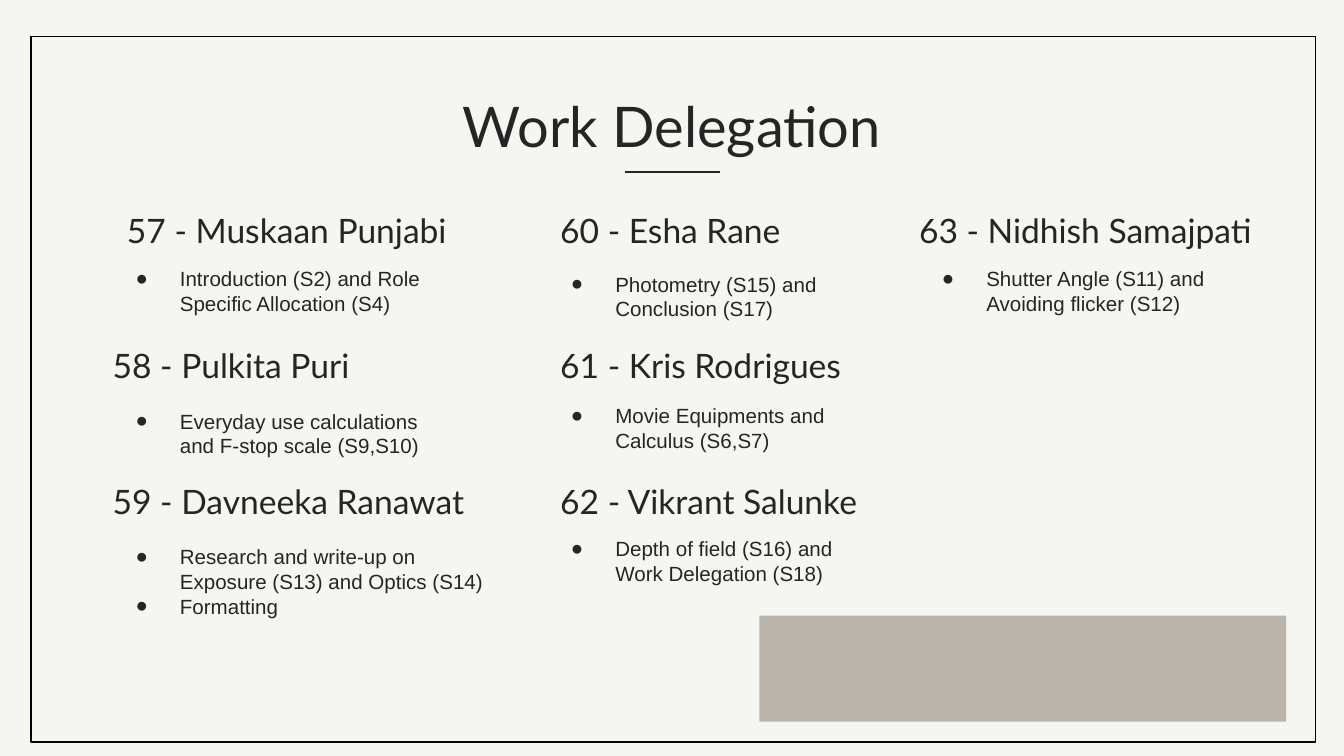
"""Build the Work Delegation slide: members in columns, each with assigned topics."""
import pptx
import pptx.dml.color
import pptx.enum.shapes
import pptx.enum.text
import pptx.util
from lxml import etree

Inches = pptx.util.Inches
Pt = pptx.util.Pt
ALIGN = pptx.enum.text.PP_ALIGN
ANCHOR = pptx.enum.text.MSO_ANCHOR
RECTANGLE = pptx.enum.shapes.MSO_SHAPE.RECTANGLE

INK, PAPER, STONE, BLACK = "252525", "F5F6F1", "B9B5AA", "000000"
SLIDE_WIDTH = 10
SLIDE_HEIGHT = SLIDE_WIDTH * 9 / 16
HEADING = "Work Delegation"
FIRST_ROW, ROW_STEP = 1.49, 1.01
NAME_SIZE = (3.13, 0.44)
DUTY_WIDTH, DUTY_HEIGHT = 2.64, 0.58

COLUMNS = [
    {"name_left": 0.74, "duty_left": 0.74, "members": [
        {"name": "57 - Muskaan Punjabi", "drop": 0.39, "name_left": 0.57, "align": ALIGN.CENTER,
         "duties": ["Introduction (S2) and Role Specific Allocation (S4)"]},
        {"name": "58 - Pulkita Puri", "drop": 0.44,
         "duties": ["Everyday use calculations and F-stop scale (S9,S10)"]},
        {"name": "59 - Davneeka Ranawat", "drop": 0.44, "duty_width": 2.96,
         "duties": ["Research and write-up on Exposure (S13) and Optics (S14)", "Formatting"]},
    ]},
    {"name_left": 4.07, "duty_left": 3.98, "members": [
        {"name": "60 - Esha Rane", "drop": 0.43,
         "duties": ["Photometry (S15) and Conclusion (S17)"]},
        {"name": "61 - Kris Rodrigues", "drop": 0.4,
         "duties": ["Movie Equipments and Calculus (S6,S7)"]},
        {"name": "62 - Vikrant Salunke", "drop": 0.38,
         "duties": ["Depth of field (S16) and Work Delegation (S18)"]},
    ]},
    {"name_left": 6.74, "duty_left": 6.74, "members": [
        {"name": "63 - Nidhish Samajpati", "drop": 0.39,
         "duties": ["Shutter Angle (S11) and Avoiding flicker (S12)"]},
    ]},
]


def color(value):
    return pptx.dml.color.RGBColor.from_string(value)


def add_rectangle(slide, box, fill=None, line=None):
    rectangle = slide.shapes.add_shape(RECTANGLE, *map(Inches, box))
    rectangle.shadow.inherit = False
    if fill:
        rectangle.fill.solid()
        rectangle.fill.fore_color.rgb = color(fill)
    else:
        rectangle.fill.background()
    if line:
        rectangle.line.color.rgb = color(line)
        rectangle.line.width = Pt(0.75)
    else:
        rectangle.line.fill.background()


def add_text(slide, box, lines, font, size, align=ALIGN.LEFT, anchor=ANCHOR.TOP):
    frame = slide.shapes.add_textbox(*map(Inches, box)).text_frame
    frame.word_wrap = True
    frame.vertical_anchor = anchor
    frame.margin_left = frame.margin_right = Inches(0.1)
    frame.margin_top = frame.margin_bottom = Inches(0.1)
    frame.text = "\n".join(lines)
    for paragraph in frame.paragraphs:
        paragraph.alignment = align
        for run in paragraph.runs:
            run.font.name = font
            run.font.size = Pt(size)
            run.font.color.rgb = color(INK)
    return frame


def add_bullets(frame):
    for paragraph in frame.paragraphs:
        properties = paragraph._p.get_or_add_pPr()
        properties.set("marL", str(Inches(0.5)))
        properties.set("indent", str(Inches(-0.33)))
        tint = etree.SubElement(properties, pptx.oxml.ns.qn("a:buClr"))
        etree.SubElement(tint, pptx.oxml.ns.qn("a:srgbClr"), val=INK)
        etree.SubElement(properties, pptx.oxml.ns.qn("a:buFont"), typeface="Arial")
        etree.SubElement(properties, pptx.oxml.ns.qn("a:buChar"), char="●")


def add_member(slide, column, row, member):
    top = FIRST_ROW + row * ROW_STEP
    name_left = member.get("name_left", column["name_left"])
    add_text(slide, (name_left, top, *NAME_SIZE), [member["name"]], "Lato", 18,
             member.get("align", ALIGN.LEFT), ANCHOR.MIDDLE)
    duty_box = (column["duty_left"], top + member["drop"],
                member.get("duty_width", DUTY_WIDTH), DUTY_HEIGHT)
    add_bullets(add_text(slide, duty_box, member["duties"], "Arial", 11))


def main():
    deck = pptx.Presentation()
    deck.slide_width, deck.slide_height = Inches(SLIDE_WIDTH), Inches(SLIDE_HEIGHT)
    slide = deck.slides.add_slide(deck.slide_layouts[6])
    slide.background.fill.solid()
    slide.background.fill.fore_color.rgb = color(PAPER)

    add_rectangle(slide, (5.65, 4.58, 3.92, 0.79), fill=STONE)
    add_rectangle(slide, (0.23, 0.27, 9.56, 5.25), line=BLACK)
    add_text(slide, (2.16, 0.58, 5.68, 0.58), [HEADING], "Lato", 30, ALIGN.CENTER)

    underline = slide.shapes.add_connector(
        pptx.enum.shapes.MSO_CONNECTOR.STRAIGHT, *map(Inches, (4.65, 1.28, 5.36, 1.28)))
    underline.line.color.rgb = color(INK)
    underline.line.width = Pt(1.5)
    etree.SubElement(underline._element.spPr, pptx.oxml.ns.qn("a:effectLst"))

    for column in COLUMNS:
        for row, member in enumerate(column["members"]):
            add_member(slide, column, row, member)
    deck.save("out.pptx")


if __name__ == "__main__":
    main()
